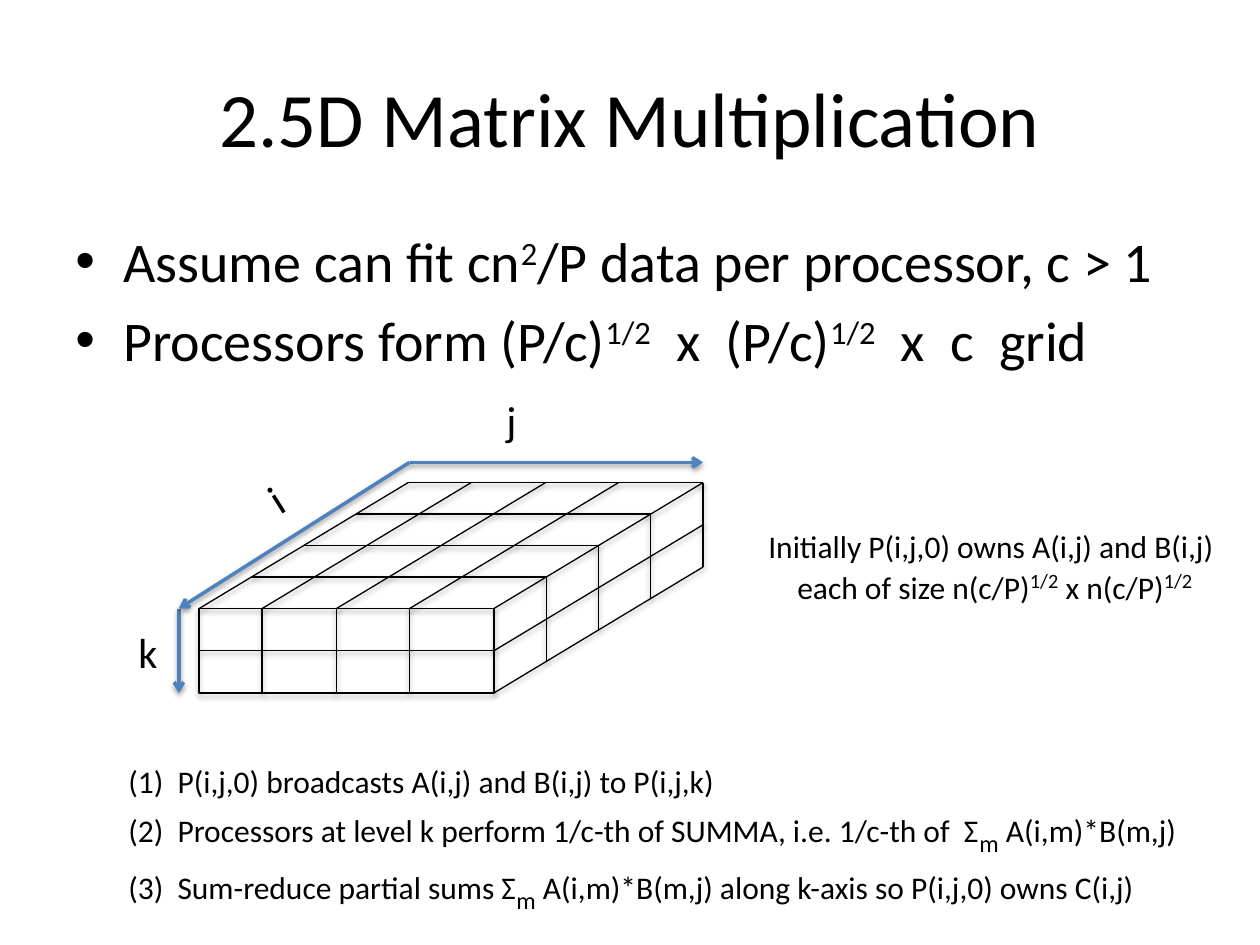
from lxml import etree
from pptx import Presentation
from pptx.dml.color import RGBColor
from pptx.enum.shapes import MSO_CONNECTOR, MSO_SHAPE
from pptx.enum.text import MSO_ANCHOR, MSO_AUTO_SIZE, PP_ALIGN
from pptx.oxml.ns import qn
from pptx.util import Inches, Pt

STRAIGHT, RECTANGLE = MSO_CONNECTOR.STRAIGHT, MSO_SHAPE.RECTANGLE
LEFT, CENTER = PP_ALIGN.LEFT, PP_ALIGN.CENTER
TOP, MIDDLE = MSO_ANCHOR.TOP, MSO_ANCHOR.MIDDLE
LEFT_SITE, RIGHT_SITE = 1, 3
BLACK, BLUE = "000000", "4F81BD"
FONT = "Calibri"

# A paragraph is a list of runs: plain text, or (text, size, baseline percent).
TITLE = [["2.5D Matrix Multiplication"]]
HALF = ("1/2", 32, 30)
ASSUMPTIONS = [
    ["Assume can fit cn", ("2", 32, 30), "/P data per processor, c > 1"],
    ["Processors form (P/c)", HALF, "  x  (P/c)", HALF, "  x  c  grid"],
]
SMALL_HALF = ("1/2", 20, 30)
OWNERSHIP = [
    ["Initially P(i,j,0) owns A(i,j) and B(i,j)"],
    ["each of size n(c/P)", SMALL_HALF, " x n(c/P)", SMALL_HALF],
]
SUB_M = ("m", 24, -25)
STEPS = [
    ["(1)  P(i,j,0) broadcasts A(i,j) and B(i,j) to P(i,j,k)"],
    ["(2)  Processors at level k perform 1/c-th of SUMMA, i.e. 1/c-th of  Σ",
     SUB_M, " A(i,m)*B(m,j)"],
    ["(3)  Sum-reduce partial sums Σ", SUB_M,
     " A(i,m)*B(m,j) along k-axis so P(i,j,0) owns C(i,j)"],
]
AXIS_LABELS = [  # letter, box, rotation
    ("k", (1, 4.92, 0.36, 0.5), 0),
    ("j", (3.92, 3.08, 0.3, 0.5), 0),
    ("i", (2.05, 3.71, 0.28, 0.5), 327.6),
]
AXES = [
    ((3.25, 3.67), (5.58, 3.67)),
    ((1.42, 4.83), (1.42, 5.5)),
    ((3.25, 3.67), (1.42, 4.83)),
]

# Processor grid: front face, and the shift from its front edge to its back edge
FRONT_LEFT, FRONT_RIGHT = 1.58, 3.92
FRONT_TOP, FRONT_BOTTOM = 4.83, 5.5
FRONT_MIDDLE = (FRONT_TOP + FRONT_BOTTOM) / 2
DEPTH_X, DEPTH_Y = 1.66, -1
CELLS = 4
COLUMN_LINES = [2.08, 2.67, 3.25]

prs = Presentation()
prs.slide_width, prs.slide_height = Inches(10), Inches(7.5)
slide = prs.slides.add_slide(prs.slide_layouts[6])
shapes = slide.shapes


def color(value):
    return RGBColor.from_string(value)


def add_text(paragraphs, box, size, align=LEFT, anchor=TOP, wrap=True, grow=True,
             rotation=0, before=0, bullet=None, indents=()):
    """Add a text box; indents holds one left indent per paragraph."""
    label = shapes.add_textbox(*map(Inches, box))
    label.rotation = rotation
    frame = label.text_frame
    frame.word_wrap = wrap
    frame.vertical_anchor = anchor
    frame.auto_size = MSO_AUTO_SIZE.SHAPE_TO_FIT_TEXT if grow else MSO_AUTO_SIZE.NONE
    for index, runs in enumerate(paragraphs):
        paragraph = frame.paragraphs[0] if index == 0 else frame.add_paragraph()
        paragraph.alignment = align
        paragraph.space_before = Pt(before)
        properties = paragraph._p.get_or_add_pPr()
        if indents:
            properties.set("marL", str(Inches(indents[index])))
        if bullet:
            properties.set("indent", str(-Inches(indents[index])))
            etree.SubElement(properties, qn("a:buFont"), typeface="Arial")
            etree.SubElement(properties, qn("a:buChar"), char=bullet)
        for part in runs:
            words, points, baseline = (part, size, 0) if isinstance(part, str) else part
            run = paragraph.add_run()
            run.text = words
            run.font.name, run.font.size = FONT, Pt(points)
            run.font.color.rgb = color(BLACK)
            if baseline:
                run.font._element.set("baseline", str(baseline * 1000))


def add_shadow(effects, opacity, distance):
    """Put a soft downward shadow in an effect list."""
    shadow = etree.SubElement(
        effects, qn("a:outerShdw"), blurRad=str(Pt(3.1)), dist=str(Pt(distance)),
        dir="5400000", rotWithShape="0")
    tint = etree.SubElement(shadow, qn("a:srgbClr"), val=BLACK)
    etree.SubElement(tint, qn("a:alpha"), val=str(opacity * 1000))


def add_line(start, end, stroke=BLACK, width=0.75, arrow=False):
    line = shapes.add_connector(STRAIGHT, *map(Inches, (*start, *end)))
    line.line.color.rgb = color(stroke)
    line.line.width = Pt(width)
    properties = line._element.spPr
    if arrow:
        etree.SubElement(properties.find(qn("a:ln")), qn("a:tailEnd"), type="arrow")
    add_shadow(etree.SubElement(properties, qn("a:effectLst")), 38, 1.6)
    return line


def add_depth_line(x, y):
    """Add a line from a point on the front face to the back."""
    return add_line((x, y), (x + DEPTH_X, y + DEPTH_Y))


def add_grid():
    front = shapes.add_shape(RECTANGLE, *map(Inches, (
        FRONT_LEFT, FRONT_TOP, FRONT_RIGHT - FRONT_LEFT, FRONT_BOTTOM - FRONT_TOP)))
    front.fill.background()
    front.line.color.rgb = color(BLACK)
    front.line.width = Pt(1)
    front.shadow.inherit = False
    add_shadow(front._element.spPr.find(qn("a:effectLst")), 35, 1.8)

    for x in (FRONT_LEFT, *COLUMN_LINES, FRONT_RIGHT):
        add_depth_line(x, FRONT_TOP)
    add_depth_line(FRONT_RIGHT, FRONT_BOTTOM)
    for x in COLUMN_LINES:
        add_line((x, FRONT_TOP), (x, FRONT_BOTTOM))

    # Each step back crosses the top face, then goes down the right side
    for step in range(1, CELLS + 1):
        dx, dy = DEPTH_X * step / CELLS, DEPTH_Y * step / CELLS
        corner = (FRONT_RIGHT + dx, FRONT_TOP + dy)
        add_line((FRONT_LEFT + dx, FRONT_TOP + dy), corner)
        add_line(corner, (FRONT_RIGHT + dx, FRONT_BOTTOM + dy))

    front_layer = add_line((FRONT_LEFT, FRONT_MIDDLE), (FRONT_RIGHT, FRONT_MIDDLE))
    front_layer.begin_connect(front, LEFT_SITE)
    front_layer.end_connect(front, RIGHT_SITE)
    side_layer = add_depth_line(FRONT_RIGHT, FRONT_MIDDLE)
    side_layer.begin_connect(front, RIGHT_SITE)


add_text(TITLE, (0.5, 0.3, 9, 1.25), 44, align=CENTER, anchor=MIDDLE, grow=False)
add_text(ASSUMPTIONS, (0.5, 1.75, 9, 1.33), 32, grow=False, before=6.4,
         bullet="•", indents=(0.38, 0.38))
add_grid()
for letter, box, rotation in AXIS_LABELS:
    add_text([[letter]], box, 24, wrap=False, rotation=rotation)
for start, end in AXES:
    add_line(start, end, stroke=BLUE, width=2, arrow=True)
add_text(OWNERSHIP, (6, 4.13, 3.77, 0.71), 18, wrap=False, indents=(0, 0.23))
add_text(STEPS, (0.92, 6, 8.72, 1.01), 18)

prs.save("out.pptx")
